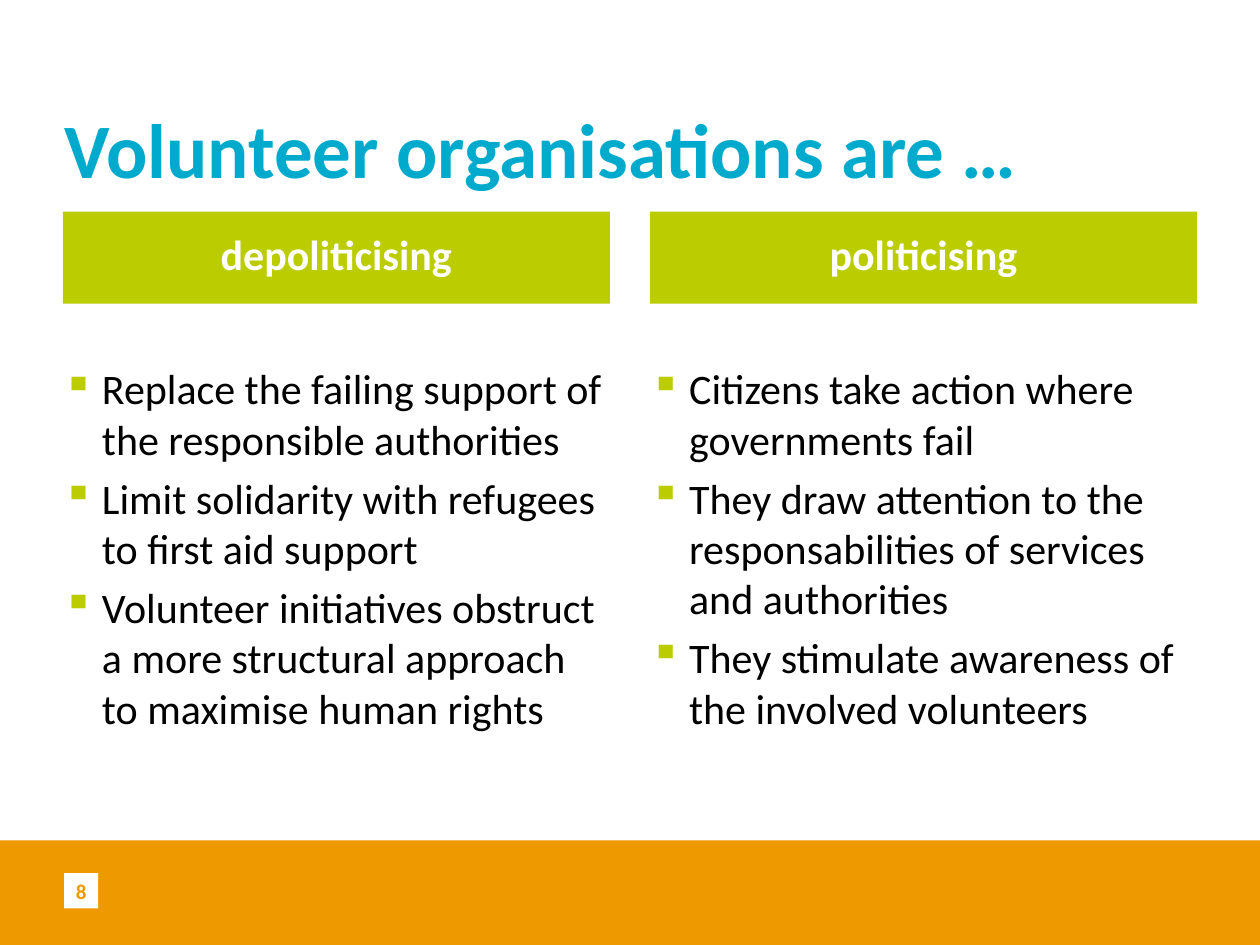
from lxml.etree import SubElement
from pptx import Presentation
from pptx.dml.color import RGBColor
from pptx.enum.shapes import MSO_SHAPE
from pptx.enum.text import MSO_ANCHOR, PP_ALIGN
from pptx.oxml.ns import qn
from pptx.util import Inches, Pt

TITLE = "Volunteer organisations are …"
PAGE = "8"
COLUMNS = [
    ("depoliticising", [
        "Replace the failing support of the responsible authorities",
        "Limit solidarity with refugees to first aid support",
        "Volunteer initiatives obstruct a more structural approach to maximise human rights",
    ]),
    ("politicising", [
        "Citizens take action where governments fail",
        "They draw attention to the responsabilities of services and authorities",
        "They stimulate awareness of the involved volunteers",
    ]),
]
THEME = {
    "font": "Calibri",
    "title": "00AACC", "header": "BBCC00", "footer": "EE9900",
    "light": "FFFFFF", "text": "000000",
    "title_size": 44, "body_size": 24, "page_size": 12,
}
WIDTH, HEIGHT = 10, 7.5
MARGIN, COL_W, GAP = 0.5, 4.34, 0.32
HEAD_Y, HEAD_H, LIST_Y, LIST_H = 1.68, 0.73, 2.88, 3.62
FOOT_Y, INDENT = 6.67, 0.31


def set_frame(tf, inset_x, inset_y, anchor):
    formats = {
        "word_wrap": True, "vertical_anchor": anchor,
        "margin_left": Inches(inset_x), "margin_right": Inches(inset_x),
        "margin_top": Inches(inset_y), "margin_bottom": Inches(inset_y),
    }
    for name, value in formats.items():
        setattr(tf, name, value)


def write(p, text, size, color, bold=False, **formats):
    for name, value in formats.items():
        setattr(p, name, value)
    r = p.add_run()
    r.text = text
    for name, value in {"name": THEME["font"], "size": Pt(THEME[size]), "bold": bold}.items():
        setattr(r.font, name, value)
    r.font.color.rgb = RGBColor.from_string(THEME[color])


def add_rect(s, box, color):
    sp = s.shapes.add_shape(MSO_SHAPE.RECTANGLE, *map(Inches, box))
    sp.shadow.inherit = False
    sp.fill.solid()
    sp.fill.fore_color.rgb = RGBColor.from_string(THEME[color])
    sp.line.fill.background()
    return sp


def add_text(s, box, anchor):
    tf = s.shapes.add_textbox(*map(Inches, box)).text_frame
    set_frame(tf, 0, 0, anchor)
    return tf


def add_bullet(p):
    pPr = p._p.get_or_add_pPr()
    pPr.set("marL", str(Inches(INDENT)))
    pPr.set("indent", str(-Inches(INDENT)))
    SubElement(SubElement(pPr, qn("a:buClr")), qn("a:srgbClr")).set("val", THEME["header"])
    SubElement(pPr, qn("a:buChar")).set("char", "▪")


def add_column(s, x, heading, items):
    tf = add_rect(s, (x, HEAD_Y, COL_W, HEAD_H), "header").text_frame
    set_frame(tf, 0.16, 0.08, MSO_ANCHOR.MIDDLE)
    write(tf.paragraphs[0], heading, "body_size", "light", True,
          alignment=PP_ALIGN.CENTER, line_spacing=Pt(24))
    tf = add_text(s, (x, LIST_Y, COL_W, LIST_H), MSO_ANCHOR.TOP)
    for i, item in enumerate(items):
        p = tf.add_paragraph() if i else tf.paragraphs[0]
        add_bullet(p)
        write(p, item, "body_size", "text", space_before=Pt(4.8 if i else 0))


def main():
    prs = Presentation()
    prs.slide_width, prs.slide_height = Inches(WIDTH), Inches(HEIGHT)
    s = prs.slides.add_slide(prs.slide_layouts[6])
    add_rect(s, (0, FOOT_Y, WIDTH, HEIGHT - FOOT_Y), "footer")
    tf = add_text(s, (0.51, 0.3, 8.98, 1.25), MSO_ANCHOR.BOTTOM)
    write(tf.paragraphs[0], TITLE, "title_size", "title", True, line_spacing=0.9)
    for i, (heading, items) in enumerate(COLUMNS):
        add_column(s, MARGIN + i * (COL_W + GAP), heading, items)
    tf = add_rect(s, (0.51, 6.93, 0.27, 0.28), "light").text_frame
    set_frame(tf, 0.04, 0.04, MSO_ANCHOR.MIDDLE)
    write(tf.paragraphs[0], PAGE, "page_size", "footer", True, alignment=PP_ALIGN.CENTER)
    prs.save("out.pptx")


if __name__ == "__main__":
    main()
